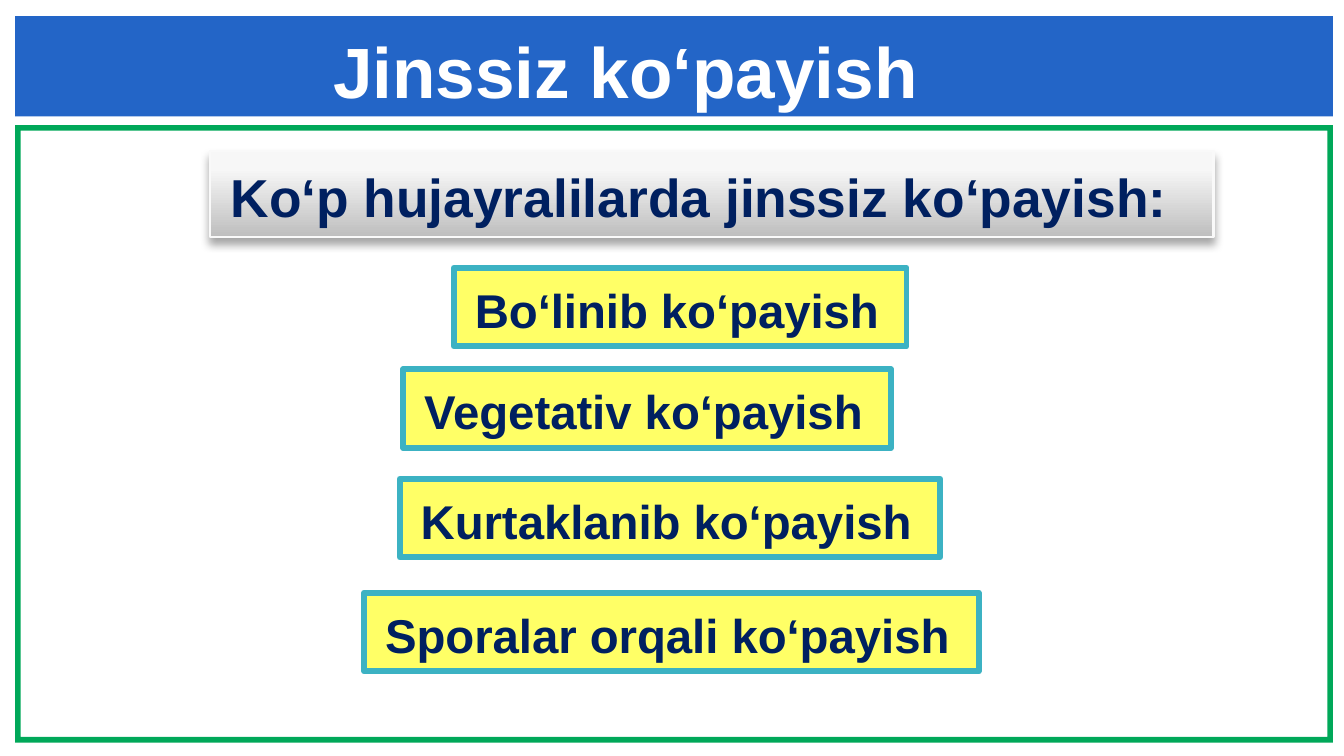
"""Build the slide on asexual reproduction of multicellular organisms."""
from lxml import etree
from pptx import Presentation
from pptx.dml.color import RGBColor
from pptx.enum import shapes, text
from pptx.util import Pt

COLOURS = {
    "banner": "2365C7", "frame": "00A859", "title": "FFFFFF", "ink": "002060",
    "item": "FFFF66", "item line": "3CB2C3", "heading line": "F9F9F9",
    "heading dark": "BEBEBE", "heading light": "F7F7F7", "shadow": "000000",
}
RECTANGLE = shapes.MSO_SHAPE.RECTANGLE
DRAWING = "http://schemas.openxmlformats.org/drawingml/2006/main"


def colour(name):
    return RGBColor.from_string(COLOURS[name])


def write(box, words, size=16, ink="ink"):
    frame = box.text_frame
    frame.word_wrap = True
    frame.auto_size = text.MSO_AUTO_SIZE.NONE
    frame.vertical_anchor = text.MSO_ANCHOR.MIDDLE
    frame.margin_left, frame.margin_right = Pt(7.2), Pt(0)
    frame.margin_top, frame.margin_bottom = Pt(5), Pt(3.6)
    para = frame.paragraphs[0]
    para.alignment = text.PP_ALIGN.LEFT
    span = para.add_run()
    span.text = words
    span.font.name = "Arial"
    span.font.size = Pt(size)
    span.font.bold = True
    span.font.color.rgb = colour(ink)


deck = Presentation()
deck.slide_width, deck.slide_height = Pt(453.6), Pt(255)
page = deck.slides.add_slide(deck.slide_layouts[5])

border = page.shapes.add_shape(
    shapes.MSO_SHAPE.FRAME, Pt(5.1), Pt(42.2), Pt(444.8), Pt(208.3))
border.adjustments[0] = 0.0092
banner = page.shapes.add_shape(RECTANGLE, Pt(5.1), Pt(5.5), Pt(444.8), Pt(33.8))
for panel, name in ((border, "frame"), (banner, "banner")):
    panel.shadow.inherit = False
    panel.fill.solid()
    panel.fill.fore_color.rgb = colour(name)
    panel.line.fill.background()

title = page.shapes.title
title.left, title.top, title.width, title.height = Pt(105.2), Pt(5), Pt(213.8), Pt(36)
write(title, "Jinssiz ko‘payish", size=24, ink="title")
banner.element.addnext(title.element)

heading = page.shapes.add_shape(RECTANGLE, Pt(70.8), Pt(51), Pt(338.8), Pt(29))
heading.fill.gradient()
heading.fill.gradient_angle = 90
for stop, name, position in zip(
        heading.fill.gradient_stops, ("heading dark", "heading light"), (0, 0.8)):
    stop.color.rgb = colour(name)
    stop.position = position
heading.line.color.rgb = colour("heading line")
heading.line.width = Pt(0.75)
heading.shadow.inherit = False
effects = heading.element.spPr.find(f"{{{DRAWING}}}effectLst")
effects.append(etree.fromstring(
    f'<a:outerShdw xmlns:a="{DRAWING}" blurRad="{Pt(3.1)}" dist="{Pt(1.8)}" '
    f'dir="5400000" rotWithShape="0"><a:srgbClr val="{COLOURS["shadow"]}">'
    '<a:alpha val="35000"/></a:srgbClr></a:outerShdw>'))
write(heading, "Ko‘p hujayralilarda jinssiz ko‘payish:", size=18)

items = (
    ("Bo‘linib ko‘payish", 153.2, 90.3, 152.8),
    ("Vegetativ ko‘payish", 136.1, 124.6, 164.6),
    ("Kurtaklanib ko‘payish", 134.9, 161.5, 182.4),
    ("Sporalar orqali ko‘payish", 122.9, 199.9, 207.4),
)
for words, left, top, width in items:
    box = page.shapes.add_shape(RECTANGLE, Pt(left), Pt(top), Pt(width), Pt(26.6))
    box.shadow.inherit = False
    box.fill.solid()
    box.fill.fore_color.rgb = colour("item")
    box.line.color.rgb = colour("item line")
    box.line.width = Pt(2)
    write(box, words)

deck.save("out.pptx")
